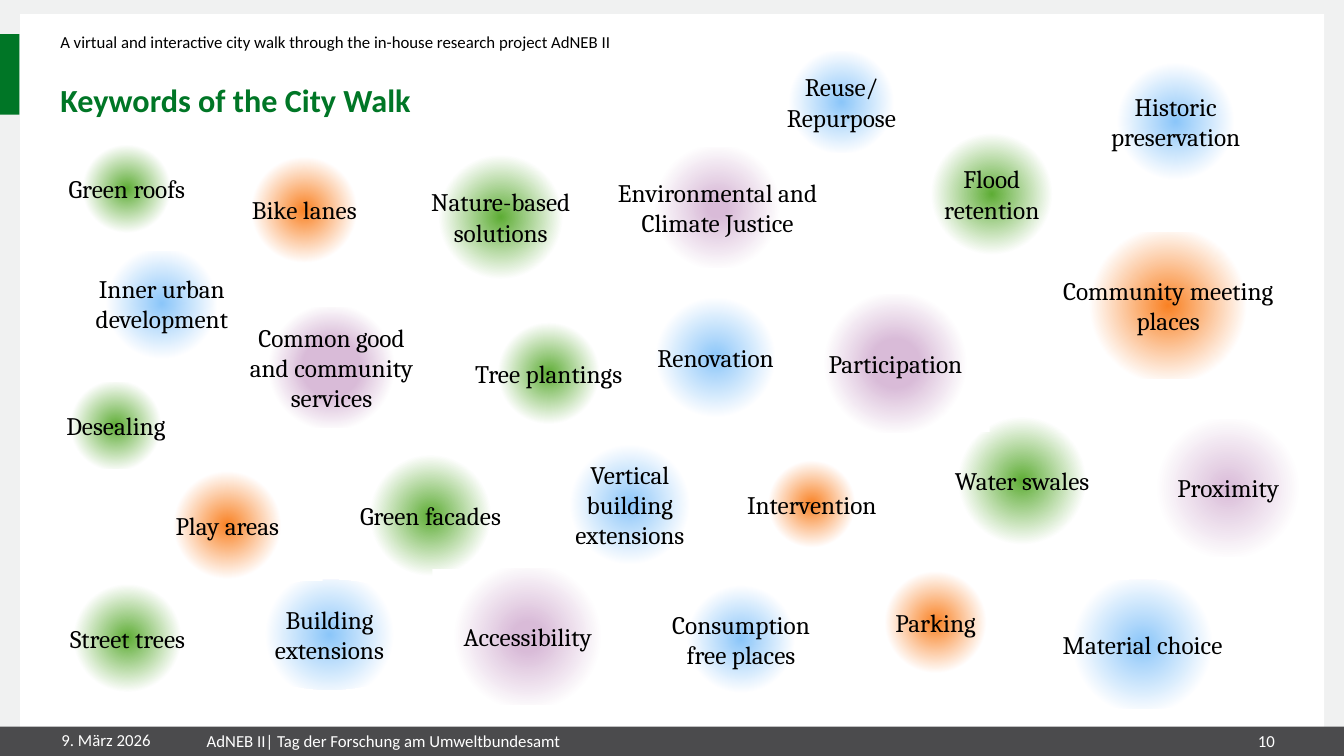
"""Build the slide with the keywords of the city walk."""
from pptx import Presentation
from pptx.dml.color import RGBColor
from pptx.enum.shapes import MSO_SHAPE
from pptx.enum.text import MSO_ANCHOR, MSO_AUTO_SIZE, PP_ALIGN
from pptx.oxml import parse_xml
from pptx.oxml.ns import nsdecls
from pptx.util import Cm, Pt

COLOURS = {
    "margin": "F0F1F1", "page": "FFFFFF", "footer": "4B4B4D", "brand": "007626",
    "text": "000000", "nature": "5EAD35", "building": "8BC6F9",
    "street": "F98224", "society": "D9BBD8",
}


def write_text(holder, text, size=12, font="Calibri", colour="text", bold=False,
               align=PP_ALIGN.LEFT, anchor=MSO_ANCHOR.MIDDLE, inset=0, spacing=None):
    frame = holder.text_frame
    frame.word_wrap = True
    frame.auto_size = MSO_AUTO_SIZE.NONE
    frame.vertical_anchor = anchor
    frame.margin_left = frame.margin_right = Cm(inset)
    frame.margin_top = frame.margin_bottom = Cm(inset / 2)
    paragraph = frame.paragraphs[0]
    paragraph.alignment = align
    if spacing:
        paragraph.line_spacing = Pt(spacing)
    run = paragraph.add_run()
    run.text = text
    run.font.name = font
    run.font.size = Pt(size)
    run.font.bold = bold
    run.font.color.rgb = RGBColor.from_string(COLOURS[colour])


def add_area(kind, box, colour):
    area = slide.shapes.add_shape(kind, *map(Cm, box))
    area.shadow.inherit = False
    area.line.fill.background()
    area.fill.solid()
    area.fill.fore_color.rgb = RGBColor.from_string(COLOURS[colour])
    return area


prs = Presentation()
prs.slide_width, prs.slide_height = Cm(33.87), Cm(19.05)
slide = prs.slides.add_slide(prs.slide_layouts[5])

slide.background.fill.solid()
slide.background.fill.fore_color.rgb = RGBColor.from_string(COLOURS["margin"])
for box, colour in [
    ((0.51, 0.36, 32.86, 18.24), "page"),
    ((0, 18.31, 33.87, 0.74), "footer"),
    ((0, 0.86, 0.49, 2.03), "brand"),
]:
    add_area(MSO_SHAPE.RECTANGLE, box, colour)

title = slide.shapes.title
title.left, title.top, title.width, title.height = map(Cm, (1.52, 1.3, 30.48, 1.7))
write_text(title, "Keywords of the City Walk", size=23, colour="brand", bold=True,
           anchor=MSO_ANCHOR.BOTTOM, spacing=22)
slide.shapes._spTree.append(title._element)

for text, box, style in [
    ("A virtual and interactive city walk through the in-house research project AdNEB II",
     (1.52, 0.79, 30.4, 0.64), {"anchor": MSO_ANCHOR.TOP}),
    ("9. März 2026", (1.55, 18.31, 3.4, 0.66), {"colour": "page"}),
    ("AdNEB II| Tag der Forschung am Umweltbundesamt",
     (5.21, 18.31, 18.92, 0.74), {"colour": "page"}),
    ("10", (30.07, 18.31, 2.06, 0.74), {"colour": "page", "align": PP_ALIGN.RIGHT}),
]:
    write_text(slide.shapes.add_textbox(*map(Cm, box)), text, **style)

keywords = [
    ("Inner urban development", "building", (0.97, 6.17, 6.22, 2.95), 0, 41),
    ("Green roofs", "nature", (0.97, 3.2, 4.45, 3.12), 0, 41),
    ("Water swales", "nature", (22.56, 10.49, 6.4, 3.25), 0, 45),
    ("Green facades", "nature", (8.74, 11.48, 4.22, 3.02), 0, 59),
    ("Desealing", "nature", (0.89, 9.65, 4.06, 2.16), 0, 50),
    ("Street trees", "nature", (0.84, 14.63, 4.75, 2.9), 0, 49),
    ("Building extensions", "building", (5.74, 14.61, 5.13, 2.77), 0, 56),
    ("Renovation", "building", (15.04, 6.81, 5.99, 4.39), 0, 41),
    ("Vertical building extensions", "building", (12.88, 10.52, 5.99, 4.39), 0, 41),
    ("Parking", "street", (21.74, 14.17, 3.68, 3.02), 0, 54),
    ("Proximity", "society", (28.55, 10.57, 4.8, 3.45), 0, 62),
    ("Bike lanes", "street", (5.46, 3.78, 4.42, 3.02), 0, 50),
    ("Accessibility", "society", (10.9, 14.33, 4.8, 3.43), 12, 64),
    ("Play areas", "street", (3.33, 11.84, 4.8, 2.79), 0, 49),
    ("Environmental and Climate Justice", "society", (15.09, 3.71, 5.99, 3.02), 7, 48),
    ("Participation", "society", (20.19, 7.42, 4.75, 3.48), 20, 62),
    ("Nature-based solutions", "nature", (10.41, 3.91, 4.42, 3.12), 0, 58),
    ("Common good and community services", "society", (5.79, 7.75, 5.13, 3.02), 24, 54),
    ("Historic preservation", "building", (26.29, 1.42, 6.68, 3.28), 0, 40),
    ("Intervention", "street", (18.06, 11.51, 4.8, 2.39), 0, 41),
    ("Material choice", "building", (24.77, 14.61, 8.05, 3.25), 0, 41),
    ("Tree plantings", "nature", (11.38, 7.95, 4.9, 2.92), 0, 45),
    ("Consumption free places", "building", (15.65, 14.71, 6.05, 2.79), 0, 41),
    ("Reuse/ Repurpose", "building", (18.21, 1.3, 5.99, 2.54), 0, 41),
    ("Flood retention", "nature", (22.86, 3.33, 4.27, 3.12), 0, 58),
    ("Community meeting places", "street", (26.24, 5.87, 6.4, 3.66), 0, 54),
]
for keyword, theme, box, core, edge in keywords:
    kind = MSO_SHAPE.OVAL if theme == "building" else MSO_SHAPE.RECTANGLE
    glow = add_area(kind, box, theme)
    properties = glow._element.spPr
    solid = properties.find("{http://schemas.openxmlformats.org/drawingml/2006/main}solidFill")
    properties.replace(solid, parse_xml(
        f'<a:gradFill {nsdecls("a")} rotWithShape="1"><a:gsLst>'
        f'<a:gs pos="{core * 1000}"><a:srgbClr val="{COLOURS[theme]}"/></a:gs>'
        f'<a:gs pos="{edge * 1000}"><a:srgbClr val="{COLOURS["page"]}"/></a:gs>'
        '</a:gsLst><a:path path="circle">'
        '<a:fillToRect l="50000" t="50000" r="50000" b="50000"/>'
        '</a:path></a:gradFill>'))
    write_text(glow, keyword, size=18, font="Cambria", align=PP_ALIGN.CENTER, inset=0.25)

prs.save("out.pptx")
